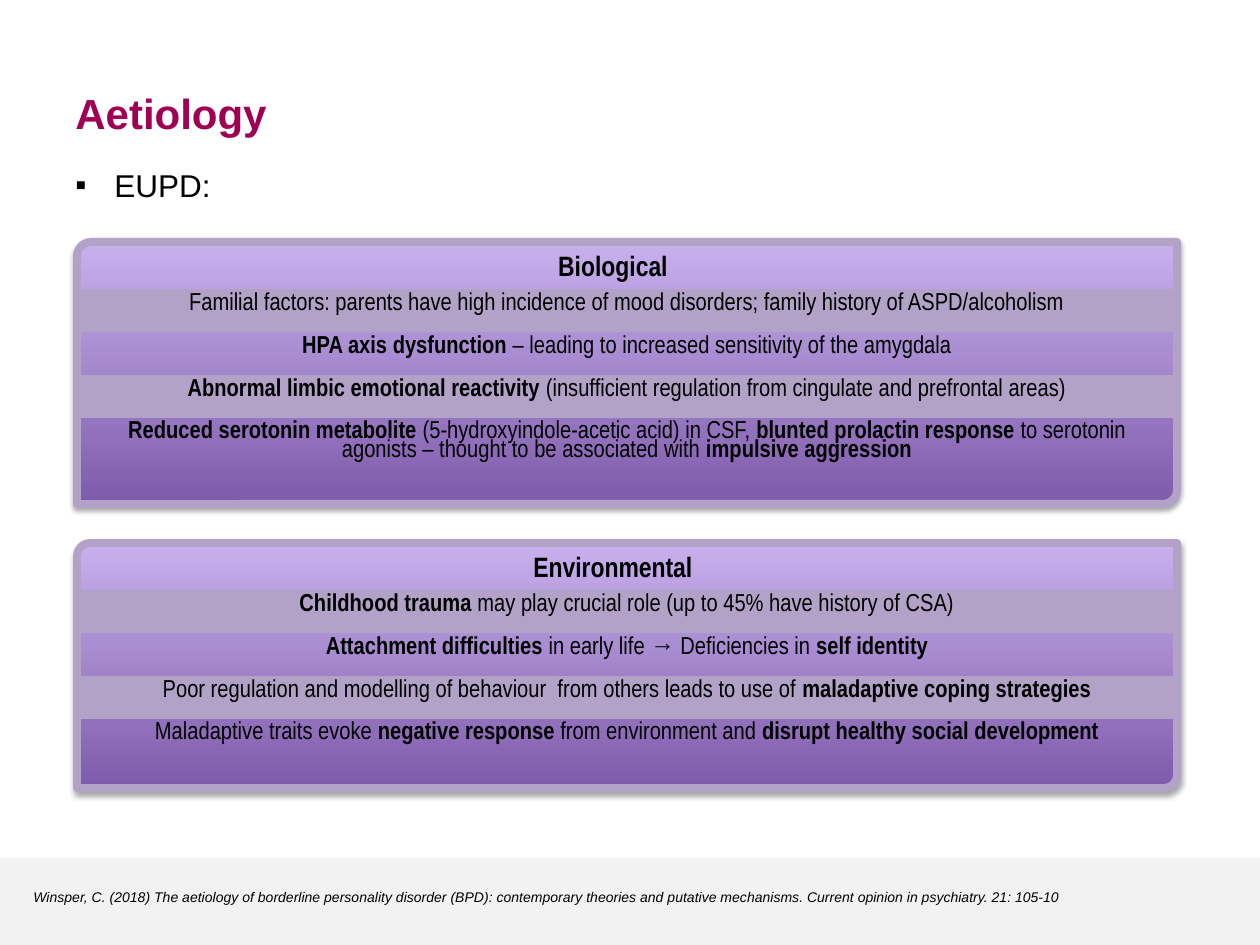
from dataclasses import dataclass

from lxml import etree
from pptx import Presentation
from pptx.dml.color import RGBColor
from pptx.enum.shapes import MSO_SHAPE
from pptx.enum.text import MSO_ANCHOR, PP_ALIGN
from pptx.oxml.ns import qn
from pptx.util import Emu, Pt

CENTER = PP_ALIGN.CENTER
LEFT = PP_ALIGN.LEFT
MIDDLE = MSO_ANCHOR.MIDDLE
TOP = MSO_ANCHOR.TOP
RECTANGLE = MSO_SHAPE.RECTANGLE
DIAGONAL_ROUND = MSO_SHAPE.ROUND_2_DIAG_RECTANGLE
EMU_PER_PX = 914400 / 126
PLAIN_TABLE = "{2D5ABB26-0587-4C30-8999-92F81FD0307C}"


@dataclass(frozen=True)
class Theme:
    sans: str = "Arial"
    narrow: str = "Arial Narrow"
    black: str = "000000"
    title: str = "A00054"
    footer: str = "F2F2F2"
    band: str = "B3A2C7"
    dark: str = "7F5BAB"
    light: str = "C8B0ED"
    title_size: int = 24
    lead_size: int = 18
    heading_size: int = 16
    row_size: int = 14
    citation_size: int = 8


THEME = Theme()

BIOLOGICAL = [
    "Familial factors: parents have high incidence of mood disorders; family history of ASPD/alcoholism",
    "**HPA axis dysfunction **– leading to increased sensitivity of the amygdala",
    "**Abnormal limbic emotional reactivity **(insufficient regulation from cingulate and prefrontal areas)",
    "**Reduced serotonin metabolite **(5-hydroxyindole-acetic acid) in CSF, **blunted prolactin response **"
    "to serotonin agonists – thought to be associated with **impulsive aggression**",
]
ENVIRONMENTAL = [
    "**Childhood trauma **may play crucial role (up to 45% have history of CSA)",
    "**Attachment difficulties **in early life → Deficiencies in **self identity**",
    "Poor regulation and modelling of behaviour  from others leads to use of **maladaptive coping strategies**",
    "Maladaptive traits evoke **negative response **from environment and **disrupt healthy social development**",
]
CITATION = (
    "Winsper, C. (2018) The aetiology of borderline personality disorder (BPD): contemporary theories "
    "and putative mechanisms. Current opinion in psychiatry. 21: 105-10"
)


def px(value):
    return Emu(round(value * EMU_PER_PX))


def rgb(color):
    return RGBColor.from_string(color)


def style_font(font, size, face, color=THEME.black, bold=False, italic=False):
    font.size = Pt(size)
    font.name = face
    font.color.rgb = rgb(color)
    font.bold = bold
    font.italic = italic


def add_text(page, area, text, size, face, align=LEFT, anchor=TOP, **look):
    box = page.shapes.add_textbox(*map(px, area))
    frame = box.text_frame
    frame.word_wrap = True
    frame.vertical_anchor = anchor
    frame.text = text
    para = frame.paragraphs[0]
    para.alignment = align
    style_font(para.runs[0].font, size, face, **look)
    return para


def add_bullet(para, indent):
    properties = para._p.get_or_add_pPr()
    properties.set("marL", str(px(indent)))
    properties.set("indent", str(-px(indent)))
    etree.SubElement(properties, qn("a:buFont"), typeface=THEME.sans)
    etree.SubElement(properties, qn("a:buChar"), char="▪")


def add_footer_bar(page):
    bar = page.shapes.add_shape(RECTANGLE, *map(px, (0, 858, 1260, 87)))
    bar.shadow.inherit = False
    bar.fill.solid()
    bar.fill.fore_color.rgb = rgb(THEME.footer)
    bar.line.fill.background()


def add_shadow(shape):
    shape.shadow.inherit = False
    effects = shape._element.spPr.find(qn("a:effectLst"))
    shadow = etree.SubElement(
        effects, qn("a:outerShdw"), blurRad=str(Pt(3.1)), dist=str(Pt(1.8)), dir="5400000", rotWithShape="0"
    )
    color = etree.SubElement(shadow, qn("a:srgbClr"), val=THEME.black)
    etree.SubElement(color, qn("a:alpha"), val="35000")


def add_panel(page, top, height):
    panel = page.shapes.add_shape(DIAGONAL_ROUND, *map(px, (77, top, 1100, height)))
    panel.adjustments[0] = 0.054
    panel.adjustments[1] = 0
    panel.fill.gradient()
    panel.fill.gradient_angle = 90
    for stop, color in zip(panel.fill.gradient_stops, (THEME.dark, THEME.light)):
        stop.color.rgb = rgb(color)
        stop.position = 0 if color == THEME.dark else 1
    panel.line.color.rgb = rgb(THEME.band)
    panel.line.width = Pt(4.5)
    add_shadow(panel)


def fill_cell(cell, text, banded):
    if banded:
        cell.fill.solid()
        cell.fill.fore_color.rgb = rgb(THEME.band)
    else:
        cell.fill.background()
    para = cell.text_frame.paragraphs[0]
    para.alignment = CENTER
    para.line_spacing = 0.8
    for index, part in enumerate(text.split("**")):
        if part:
            span = para.add_run()
            span.text = part
            style_font(span.font, THEME.row_size, THEME.narrow, bold=index % 2 == 1)


def add_rows(page, top, rows):
    row_height = 43
    frame = page.shapes.add_table(len(rows), 1, *map(px, (76, top, 1102, row_height * len(rows))))
    table = frame.table
    table.first_row = False
    table.horz_banding = False
    table._tbl.tblPr.find(qn("a:tableStyleId")).text = PLAIN_TABLE
    for index, text in enumerate(rows):
        fill_cell(table.cell(index, 0), text, index % 2 == 0)


def add_factor_card(page, top, height, heading, rows):
    add_panel(page, top, height)
    add_text(page, (77, top, 1072, 47), heading, THEME.heading_size, THEME.narrow, CENTER, bold=True)
    add_rows(page, top + 47, rows)


def main():
    deck = Presentation()
    deck.slide_width = px(1260)
    deck.slide_height = px(945)
    page = deck.slides.add_slide(deck.slide_layouts[6])
    add_footer_bar(page)
    add_text(
        page, (63, 78, 1071, 69), "Aetiology", THEME.title_size, THEME.sans,
        anchor=MIDDLE, color=THEME.title, bold=True,
    )
    lead = add_text(page, (63, 160, 1159, 50), "EUPD:", THEME.lead_size, THEME.sans)
    add_bullet(lead, 39)
    add_factor_card(page, 242, 262, "Biological", BIOLOGICAL)
    add_factor_card(page, 543, 245, "Environmental", ENVIRONMENTAL)
    add_text(page, (21, 882, 1068, 30), CITATION, THEME.citation_size, THEME.sans, italic=True)
    deck.save("out.pptx")


if __name__ == "__main__":
    main()
